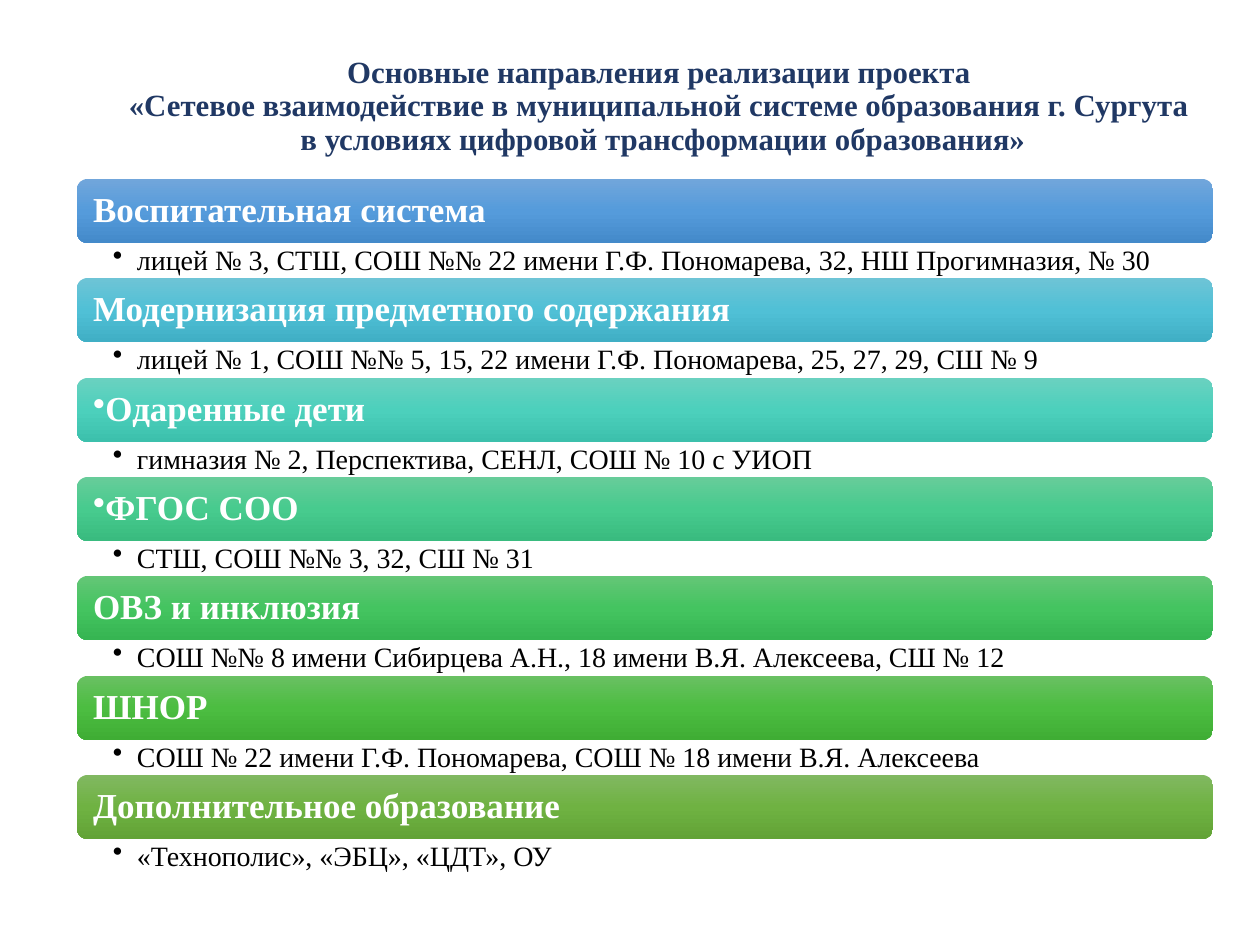
from copy import deepcopy

from pptx import Presentation
from pptx.dml.color import RGBColor
from pptx.enum.shapes import MSO_SHAPE
from pptx.enum.text import MSO_ANCHOR, PP_ALIGN
from pptx.oxml.ns import qn
from pptx.util import Pt
from lxml.etree import SubElement

PX = 914400 / 126  # EMU in one px


def paint(color, code):
    color.rgb = RGBColor.from_string(code)


def write(shape, lines, size, code, bold=False, align=PP_ALIGN.LEFT,
          anchor=MSO_ANCHOR.MIDDLE, pads=(13, 6, 13, 6), dot=False, hang=0):
    frame = shape.text_frame
    frame.word_wrap = True
    frame.vertical_anchor = anchor
    (frame.margin_left, frame.margin_top,
     frame.margin_right, frame.margin_bottom) = [int(p * PX) for p in pads]
    frame.text = "\n".join(lines)
    for para in frame.paragraphs:
        para.alignment = align
        para.line_spacing = 0.9
        if dot:
            props = para._p.get_or_add_pPr()
            props.set("marL", str(int(hang * PX)))
            props.set("indent", str(int(-hang * PX)))
            SubElement(props, qn("a:buChar")).set("char", "•")
        font = para.font
        font.name, font.size, font.bold = "Times New Roman", Pt(size), bold
        paint(font.color, code)


deck = Presentation()
deck.slide_width, deck.slide_height = int(1260 * PX), int(945 * PX)
shapes = deck.slides.add_slide(deck.slide_layouts[6]).shapes

# Title
title = shapes.add_textbox(*[int(n * PX) for n in (88, 38, 1150, 125)])
write(title, ["Основные направления реализации проекта \v"
              "«Сетевое взаимодействие в муниципальной системе образования г. Сургута ",
              "в условиях цифровой трансформации образования»"],
      17.6, "203864", True, PP_ALIGN.CENTER, MSO_ANCHOR.BOTTOM)

# Directions: heading, bullet on heading, schools, gradient
rows = [
    ("Воспитательная система", False,
     "лицей № 3, СТШ, СОШ №№ 22 имени Г.Ф. Пономарева, 32, НШ Прогимназия, № 30",
     ("71A6DB", "559BDB", "448ACA")),
    ("Модернизация предметного содержания", False,
     "лицей № 1, СОШ №№ 5, 15, 22 имени Г.Ф. Пономарева, 25, 27, 29, СШ № 9",
     ("6EC4D6", "50C0D6", "40AFC5")),
    ("Одаренные дети", True,
     "гимназия № 2, Перспектива, СЕНЛ, СОШ № 10 с УИОП",
     ("6AD1C0", "4CD0BC", "3CC0AC")),
    ("ФГОС СОО", True,
     "СТШ, СОШ №№ 3, 32, СШ № 31",
     ("67CC9A", "47CB8E", "39BB7F")),
    ("ОВЗ и инклюзия", False,
     "СОШ №№ 8 имени Сибирцева А.Н., 18 имени В.Я. Алексеева, СШ № 12",
     ("64C677", "44C460", "36B552")),
    ("ШНОР", False,
     "СОШ № 22 имени Г.Ф. Пономарева, СОШ № 18 имени В.Я. Алексеева",
     ("69C062", "4CBD41", "3FAD34")),
    ("Дополнительное образование", False,
     "«Технополис», «ЭБЦ», «ЦДТ», ОУ",
     ("81B861", "6FB242", "62A336")),
]
left, first, last, width, tall, low = 77, 179, 775, 1136, 64, 36
step = (last - first) / (len(rows) - 1)

for i, (head, dot, schools, tones) in enumerate(rows):
    top = round(first + i * step)

    # Heading bar
    bar = shapes.add_shape(MSO_SHAPE.ROUNDED_RECTANGLE,
                           *[int(n * PX) for n in (left, top, width, tall)])
    bar.shadow.inherit = False
    bar.line.fill.background()
    bar.fill.gradient()
    bar.fill.gradient_angle = 270
    stops = bar._element.spPr.find(".//" + qn("a:gsLst"))
    stops.insert(1, deepcopy(stops[0]))
    for stop, tone, place in zip(bar.fill.gradient_stops, tones, (0, 0.5, 1)):
        paint(stop.color, tone)
        stop.position = place
    write(bar, [head], 20, "FFFFFF", True, dot=dot)

    # Schools under the bar
    note = shapes.add_textbox(*[int(n * PX) for n in (left, top + tall, width, low)])
    write(note, [schools], 16, "000000", anchor=MSO_ANCHOR.TOP,
          pads=(36, 3, 15, 3), dot=True, hang=24)

deck.save("out.pptx")
